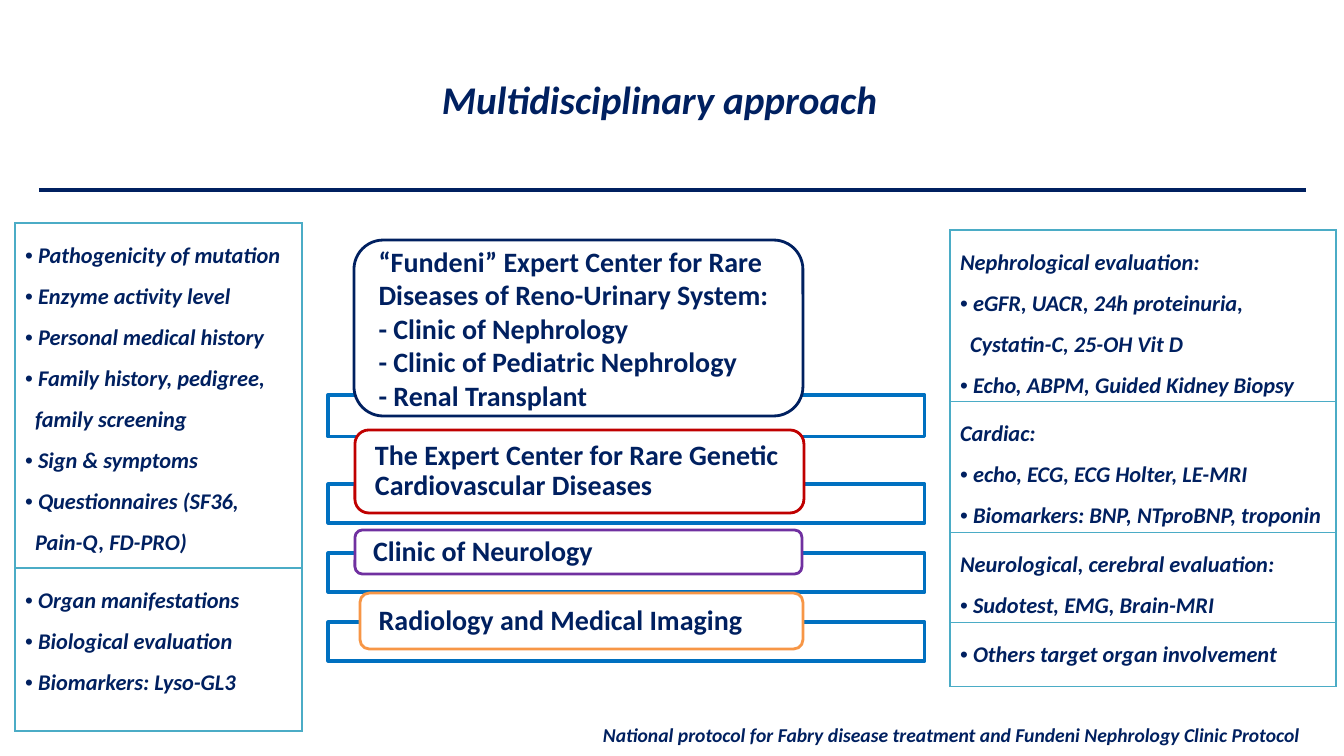
"""Build the slide on the multidisciplinary approach to Fabry disease."""
from lxml.etree import SubElement
from pptx import Presentation
from pptx.dml.color import RGBColor
from pptx.enum.shapes import MSO_CONNECTOR, MSO_SHAPE
from pptx.enum.text import MSO_ANCHOR, PP_ALIGN
from pptx.oxml.ns import qn
from pptx.util import Emu, Pt

NAVY = RGBColor(0x00, 0x20, 0x60)
BLUE = RGBColor(0x00, 0x70, 0xC0)
RED = RGBColor(0xC0, 0x00, 0x00)
PURPLE = RGBColor(0x70, 0x30, 0xA0)
ORANGE = RGBColor(0xF7, 0x96, 0x46)
WHITE = RGBColor(0xFF, 0xFF, 0xFF)
TEAL = "4BACC6"
FONT = "Calibri"

HEAD, ITEM, MORE = "head", "item", "more"
INDENTS = {HEAD: (0, 0), ITEM: (13, -13), MORE: (10, 0)}

TITLE = "Multidisciplinary approach"
SOURCE = "National protocol for Fabry disease treatment and Fundeni Nephrology Clinic Protocol"
TABLES = [
    (15, 223, 287, [
        (345, [(ITEM, "Pathogenicity of mutation"),
               (ITEM, "Enzyme activity level"),
               (ITEM, "Personal medical history"),
               (ITEM, "Family history, pedigree,"),
               (MORE, "family screening"),
               (ITEM, "Sign & symptoms"),
               (ITEM, "Questionnaires (SF36,"),
               (MORE, "Pain-Q, FD-PRO)")]),
        (163, [(ITEM, "Organ manifestations"),
               (ITEM, "Biological evaluation"),
               (ITEM, "Biomarkers: Lyso-GL3")]),
    ]),
    (950, 230, 386, [
        (161, [(HEAD, "Nephrological evaluation:"),
               (ITEM, "eGFR, UACR, 24h proteinuria,"),
               (MORE, "Cystatin-C, 25-OH Vit D"),
               (ITEM, "Echo, ABPM, Guided Kidney Biopsy")]),
        (131, [(HEAD, "Cardiac:"),
               (ITEM, "echo, ECG, ECG Holter, LE-MRI"),
               (ITEM, "Biomarkers: BNP, NTproBNP, troponin")]),
        (90, [(HEAD, "Neurological, cerebral evaluation:"),
              (ITEM, "Sudotest, EMG, Brain-MRI")]),
        (64, [(ITEM, "Others target organ involvement")]),
    ]),
]
BAR_LEFT, BAR_WIDTH = 328, 597
CLINICS = [
    ((395, 42), (354, 240, 449, 176), NAVY, 1.0,
     ["“Fundeni” Expert Center for Rare Diseases of Reno-Urinary System:",
      "- Clinic of Nephrology", "- Clinic of Pediatric Nephrology", "- Renal Transplant"]),
    ((484, 39), (355, 430, 449, 83), RED, 0.9,
     ["The Expert Center for Rare Genetic Cardiovascular Diseases"]),
    ((553, 39), (355, 530, 447, 44), PURPLE, 0.9, ["Clinic of Neurology"]),
    ((622, 39), (360, 593, 443, 56), ORANGE, 0.9, ["Radiology and Medical Imaging"]),
]


def px(length):
    return Emu(round(length * 914400 / 100.8))


def style(para, size, italic=True):
    for span in para.runs:
        font = span.font
        font.name, font.size, font.bold, font.italic = FONT, Pt(size), True, italic
        font.color.rgb = NAVY


def set_margins(frame, left, right):
    frame.margin_left, frame.margin_right = px(left), px(right)
    frame.margin_top = frame.margin_bottom = 0
    frame.word_wrap = True


def add_label(page, place, text, size, right_margin=0):
    frame = page.shapes.add_textbox(*map(px, place)).text_frame
    set_margins(frame, 0, right_margin)
    frame.text = text
    style(frame.paragraphs[0], size)
    return frame


def add_panel(page, place, kind, color, weight):
    panel = page.shapes.add_shape(kind, *map(px, place))
    panel.shadow.inherit = False
    panel.fill.solid()
    panel.fill.fore_color.rgb = WHITE
    panel.line.color.rgb = color
    panel.line.width = Pt(weight)
    return panel


def add_borders(cell):
    properties = cell._tc.get_or_add_tcPr()
    for position, side in enumerate(("a:lnL", "a:lnR", "a:lnT", "a:lnB")):
        line = properties.makeelement(qn(side), {"w": str(Pt(1))})
        fill = SubElement(line, qn("a:solidFill"))
        SubElement(fill, qn("a:srgbClr"), val=TEAL)
        properties.insert(position, line)


def fill_cell(cell, entries):
    cell.fill.background()
    add_borders(cell)
    cell.text_frame.text = "\n".join(text for _, text in entries)
    for para, (kind, _) in zip(cell.text_frame.paragraphs, entries):
        para.line_spacing = 1.5
        properties = para._p.get_or_add_pPr()
        left, indent = INDENTS[kind]
        properties.set("marL", str(px(left)))
        properties.set("indent", str(px(indent)))
        if kind == ITEM:
            SubElement(properties, qn("a:buFont"), typeface="Arial")
            SubElement(properties, qn("a:buChar"), char="•")
        style(para, 16)


def add_checklist(page, left, top, width, rows):
    height = sum(row_height for row_height, _ in rows)
    table = page.shapes.add_table(len(rows), 1, *map(px, (left, top, width, height))).table
    table.first_row = table.horz_banding = False
    for row, (row_height, entries) in zip(table.rows, rows):
        row.height = px(row_height)
        fill_cell(row.cells[0], entries)


def add_clinic(page, bar_span, place, color, spacing, lines):
    top, height = bar_span
    bar = add_panel(page, (BAR_LEFT, top, BAR_WIDTH, height), MSO_SHAPE.RECTANGLE, BLUE, 2.25)
    tint = bar.fill._xPr.find(qn("a:solidFill"))[0]
    SubElement(tint, qn("a:alpha"), val="90000")
    box = add_panel(page, place, MSO_SHAPE.ROUNDED_RECTANGLE, color, 2)
    frame = box.text_frame
    set_margins(frame, 16, 16)
    frame.vertical_anchor = MSO_ANCHOR.MIDDLE
    frame.text = "\n".join(lines)
    for para in frame.paragraphs:
        para.alignment = PP_ALIGN.LEFT
        para.line_spacing = spacing
        style(para, 20, italic=False)


def main():
    deck = Presentation()
    deck.slide_width, deck.slide_height = px(1344), px(756)
    page = deck.slides.add_slide(deck.slide_layouts[6])

    rule = page.shapes.add_connector(MSO_CONNECTOR.STRAIGHT, *map(px, (39, 190, 1306, 190)))
    rule.line.color.rgb = NAVY
    rule.line.width = Pt(3.5)
    SubElement(rule._element.spPr, qn("a:effectLst"))

    title = add_label(page, (0, 30, 1336, 138), TITLE, 28, right_margin=17)
    title.vertical_anchor = MSO_ANCHOR.MIDDLE
    title.paragraphs[0].alignment = PP_ALIGN.CENTER

    for checklist in TABLES:
        add_checklist(page, *checklist)
    add_label(page, (603, 723, 741, 33), SOURCE, 14)
    for clinic in CLINICS:
        add_clinic(page, *clinic)

    deck.save("out.pptx")


if __name__ == "__main__":
    main()
